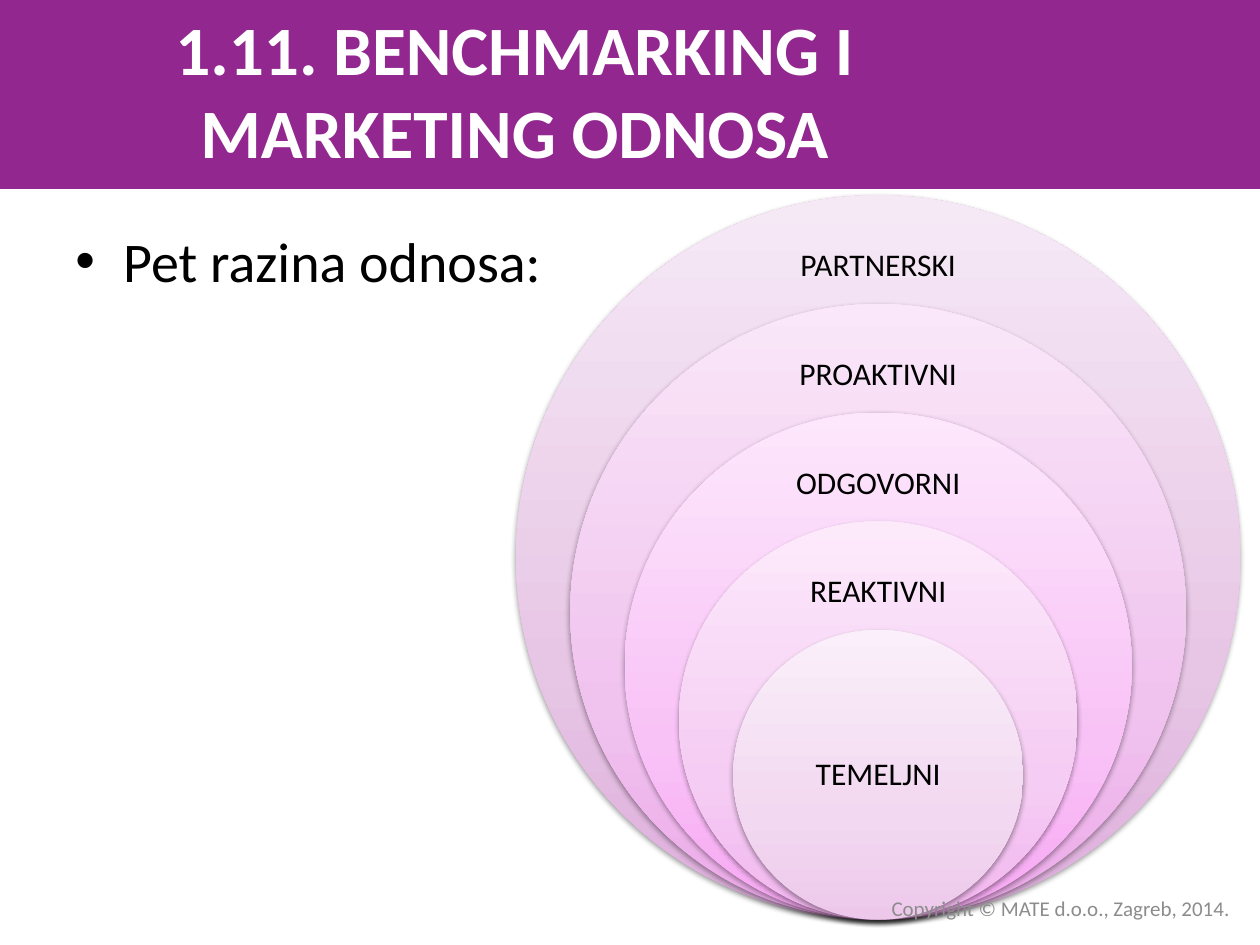
from lxml.etree import SubElement
from pptx import Presentation
from pptx.dml.color import RGBColor
from pptx.enum.shapes import MSO_SHAPE as Shape
from pptx.enum.text import MSO_ANCHOR as Anchor, PP_ALIGN as Align
from pptx.oxml.ns import qn
from pptx.util import Inches, Pt

COLORS = {"band": "92278F", "title": "FFFFFF", "text": "000000", "footer": "8C8C8C"}

# Outermost first: label, label width, gradient from bottom to top
LEVELS = [
    ("PARTNERSKI", 2.16, ("DEADDC", "E7C6E5", "F6E9F6")),
    ("PROAKTIVNI", 2.11, ("ECA9E8", "F0C3EE", "FAE7F9")),
    ("ODGOVORNI", 2.08, ("F7A7F3", "F8C2F6", "FDE7FC")),
    ("REAKTIVNI", 1.71, ("F2B6EF", "F5CCF3", "FCEAFB")),
    ("TEMELJNI", 1.63, ("EDC8EB", "F2D8F0", "FAEFFA")),
]
STOPS = (0, 35000, 100000)


def add_xml(parent, tag, **attributes):
    return SubElement(parent, qn(tag), {k: str(v) for k, v in attributes.items()})


class SlideBuilder:
    """Places elements on a grid of 10 columns by 7.5 rows, one inch each."""

    font = "Calibri"
    cell = Inches(1)

    def __init__(self, deck):
        self.slide = deck.slides.add_slide(deck.slide_layouts[6])

    def place(self, *grid):
        return [int(self.cell * value) for value in grid]

    def shape(self, kind, *grid):
        shape = self.slide.shapes.add_shape(kind, *self.place(*grid))
        shape.shadow.inherit = False
        shape.line.fill.background()
        return shape

    def band(self, *grid, color):
        band = self.shape(Shape.RECTANGLE, *grid)
        band.fill.solid()
        band.fill.fore_color.rgb = RGBColor.from_string(COLORS[color])

    def circle(self, center, bottom, diameter, shades):
        circle = self.shape(Shape.OVAL, center - diameter / 2, bottom - diameter,
                            diameter, diameter)
        # Three-stop gradient running upwards
        circle.fill.gradient()
        circle.fill.gradient_angle = 90
        properties = circle._element.spPr
        stops = properties.find(qn("a:gradFill")).find(qn("a:gsLst"))
        for stop in list(stops):
            stops.remove(stop)
        for position, shade in zip(STOPS, shades):
            add_xml(add_xml(stops, "a:gs", pos=position), "a:srgbClr", val=shade)
        # Soft shadow below
        shadow = add_xml(properties.find(qn("a:effectLst")), "a:outerShdw",
                         blurRad=Pt(3.1), dist=Pt(1.6), dir=5400000, rotWithShape=0)
        add_xml(add_xml(shadow, "a:srgbClr", val="000000"), "a:alpha", val=38000)

    def text(self, words, *grid, size, color="text", align=Align.LEFT,
             anchor=Anchor.MIDDLE, bold=False, inset=None, spacing=None, bullet=False):
        frame = self.slide.shapes.add_textbox(*self.place(*grid)).text_frame
        frame.word_wrap = True
        frame.vertical_anchor = anchor
        if inset is not None:
            frame.margin_left = frame.margin_right = Inches(inset)
            frame.margin_top = frame.margin_bottom = Inches(inset)
        paragraph = frame.paragraphs[0]
        if bullet:
            properties = paragraph._p.get_or_add_pPr()
            properties.set("marL", str(Inches(0.38)))
            properties.set("indent", str(-Inches(0.38)))
            add_xml(properties, "a:buFont", typeface="Arial")
            add_xml(properties, "a:buChar", char="•")
        paragraph.alignment = align
        if spacing:
            paragraph.line_spacing = spacing
        run = paragraph.add_run()
        run.text = words
        run.font.name, run.font.size, run.font.bold = self.font, Pt(size), bold
        run.font.color.rgb = RGBColor.from_string(COLORS[color])


def main():
    deck = Presentation()
    deck.slide_width, deck.slide_height = Inches(10), Inches(7.5)
    page = SlideBuilder(deck)

    # Header band and bullet
    page.band(0, 0, 10, 1.5, color="band")
    page.text("Pet razina odnosa:", 0.5, 1.75, 9, 4.95, size=32,
              anchor=Anchor.TOP, bullet=True)

    # Nested circles share their lowest point; each is 15 % of the largest smaller
    center, bottom, largest = 6.97, 7.3, 5.75
    for step, (label, width, shades) in enumerate(LEVELS):
        diameter = largest * (1 - 0.15 * step)
        page.circle(center, bottom, diameter, shades)
        innermost = step == len(LEVELS) - 1
        drop, height = (diameter / 4, diameter / 2) if innermost else (0.28, 0.57)
        page.text(label, center - width / 2, bottom - diameter + drop, width, height,
                  size=18, align=Align.CENTER, inset=0.14, spacing=0.9)

    # Title and copyright line
    page.text("1.11. BENCHMARKING I MARKETING ODNOSA", 0, 0.08, 8.17, 1.25,
              size=39.6, color="title", align=Align.CENTER, bold=True)
    page.text("Copyright © MATE d.o.o., Zagreb, 2014.", 4.69, 7.06, 5.17, 0.3,
              size=12, color="footer", align=Align.RIGHT)

    deck.save("out.pptx")


if __name__ == "__main__":
    main()
